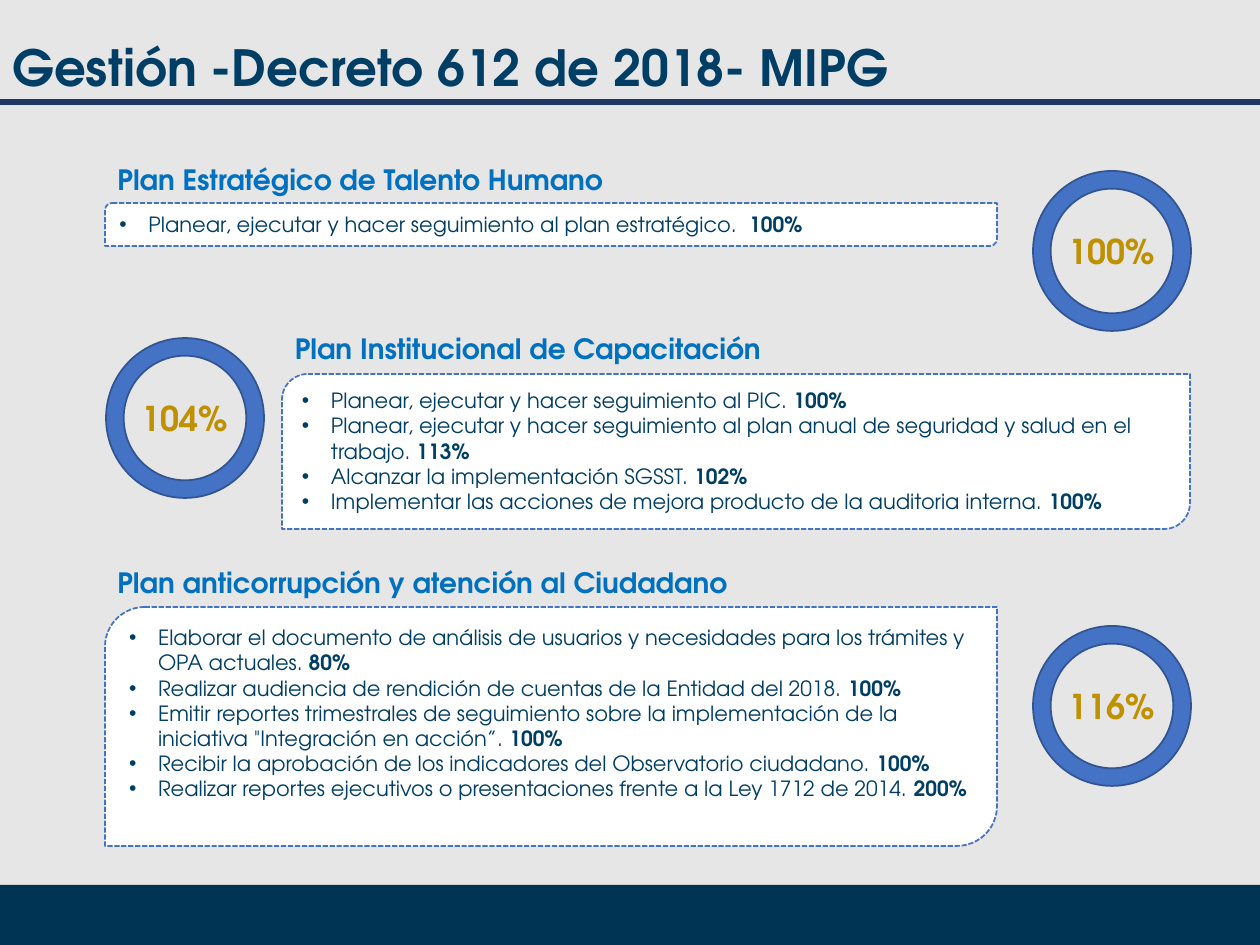
from dataclasses import dataclass

from lxml.etree import SubElement
from pptx import Presentation
from pptx.dml.color import RGBColor
from pptx.enum.dml import MSO_LINE
from pptx.enum.shapes import MSO_CONNECTOR, MSO_SHAPE
from pptx.enum.text import MSO_ANCHOR, PP_ALIGN
from pptx.oxml.ns import qn
from pptx.util import Pt


@dataclass(frozen=True)
class Theme:
    font: str = "TeX Gyre Adventor"
    background: str = "E7E6E6"
    footer: str = "003454"
    rule: str = "203864"
    text: str = "003E65"
    heading: str = "0070C0"
    panel: str = "FFFFFF"
    accent: str = "4472C4"
    ring_edge: str = "325491"
    percent: str = "BF9000"
    title_size: float = 28.5
    heading_size: float = 16
    body_size: float = 12
    percent_size: float = 19.5


THEME = Theme()
EMU_PER_PX = 914400 / 126
SLIDE_WIDTH, SLIDE_HEIGHT = 1260, 945
FOOTER_TOP, RULE_TOP = 885, 102
RING_WIDTH, RING_HEIGHT = 158, 160
HEADING_HEIGHT, LABEL_HEIGHT, BULLET_INDENT = 47, 54, 29

TITLE = "Gestión -Decreto 612 de 2018- MIPG"
PLANS = [
    {
        "heading": "Plan Estratégico de Talento Humano",
        "heading_box": (105, 156, 572), "align": PP_ALIGN.LEFT,
        "panel": (105, 203, 892, 43),
        "ring": (1033, 171), "total": "100%",
        "goals": [("Planear, ejecutar y hacer seguimiento al plan estratégico.  ", "100%")],
    },
    {
        "heading": "Plan Institucional de Capacitación",
        "heading_box": (282, 325, 492), "align": PP_ALIGN.CENTER,
        "panel": (282, 374, 908, 155),
        "ring": (106, 338), "total": "104%",
        "goals": [
            ("Planear, ejecutar y hacer seguimiento al PIC. ", "100%"),
            ("Planear, ejecutar y hacer seguimiento al plan anual de seguridad y salud en el trabajo. ", "113%"),
            ("Alcanzar la implementación SGSST. ", "102%"),
            ("Implementar las acciones de mejora producto de la auditoria interna. ", "100%"),
        ],
    },
    {
        "heading": "Plan anticorrupción y atención al Ciudadano",
        "heading_box": (105, 559, 743), "align": PP_ALIGN.LEFT,
        "panel": (105, 607, 892, 239),
        "ring": (1033, 626), "total": "116%",
        "goals": [
            ("Elaborar el documento de análisis de usuarios y necesidades para los trámites y OPA actuales. ", "80%"),
            ("Realizar audiencia de rendición de cuentas de la Entidad del 2018. ", "100%"),
            ("Emitir reportes trimestrales de seguimiento sobre la implementación de la iniciativa \"Integración en acción”. ", "100%"),
            ("Recibir la aprobación de los indicadores del Observatorio ciudadano. ", "100%"),
            ("Realizar reportes ejecutivos o presentaciones frente a la Ley 1712 de 2014. ", "200%"),
        ],
    },
]


def px(*lengths):
    return [round(length * EMU_PER_PX) for length in lengths]


def color(value):
    return RGBColor.from_string(value)


def style(font, size, value, bold=None):
    font.name, font.size, font.bold = THEME.font, Pt(size), bold
    font.color.rgb = color(value)


def add_box(shapes, kind, box, fill, edge=None):
    shape = shapes.add_shape(kind, *px(*box))
    shape.shadow.inherit = False
    shape.fill.solid()
    shape.fill.fore_color.rgb = color(fill)
    if edge:
        shape.line.color.rgb = color(edge)
        shape.line.width = Pt(1)
    else:
        shape.line.fill.background()
    return shape


def add_label(shapes, text, box, size, value, align=PP_ALIGN.LEFT):
    frame = shapes.add_textbox(*px(*box)).text_frame
    frame.word_wrap = True
    paragraph = frame.paragraphs[0]
    paragraph.text, paragraph.alignment = text, align
    style(paragraph.font, size, value, True)
    return frame


def add_panel(shapes, box, goals):
    shape = add_box(shapes, MSO_SHAPE.ROUND_2_DIAG_RECTANGLE, box, THEME.panel, THEME.accent)
    shape.line.dash_style = MSO_LINE.SQUARE_DOT
    frame = shape.text_frame
    frame.word_wrap = True
    frame.vertical_anchor = MSO_ANCHOR.TOP
    [indent] = px(BULLET_INDENT)
    for index, (goal, result) in enumerate(goals):
        paragraph = frame.add_paragraph() if index else frame.paragraphs[0]
        paragraph.alignment = PP_ALIGN.LEFT
        properties = paragraph._p.get_or_add_pPr()
        properties.set("marL", str(indent))
        properties.set("indent", str(-indent))
        SubElement(properties, qn("a:buFont"), typeface="Arial")
        SubElement(properties, qn("a:buChar"), char="•")
        for text, bold in ((goal, False), (result, True)):
            run = paragraph.add_run()
            run.text = text
            style(run.font, THEME.body_size, THEME.text, bold)


def add_ring(shapes, left, top, total):
    group = shapes.add_group_shape().shapes
    ring = add_box(group, MSO_SHAPE.DONUT, (left, top, RING_WIDTH, RING_HEIGHT),
                   THEME.accent, THEME.ring_edge)
    ring.adjustments[0] = 0.112
    label_top = top + (RING_HEIGHT - LABEL_HEIGHT) / 2
    add_label(group, total, (left, label_top, RING_WIDTH, LABEL_HEIGHT),
              THEME.percent_size, THEME.percent, PP_ALIGN.CENTER)


def main():
    """Build the plan progress slide and save it."""
    presentation = Presentation()
    presentation.slide_width, presentation.slide_height = px(SLIDE_WIDTH, SLIDE_HEIGHT)
    slide = presentation.slides.add_slide(presentation.slide_layouts[6])
    slide.background.fill.solid()
    slide.background.fill.fore_color.rgb = color(THEME.background)
    shapes = slide.shapes

    add_box(shapes, MSO_SHAPE.RECTANGLE,
            (0, FOOTER_TOP, SLIDE_WIDTH, SLIDE_HEIGHT - FOOTER_TOP), THEME.footer)
    rule = shapes.add_connector(MSO_CONNECTOR.STRAIGHT, *px(0, RULE_TOP, SLIDE_WIDTH, RULE_TOP))
    rule.line.color.rgb = color(THEME.rule)
    rule.line.width = Pt(3)
    SubElement(rule._element.spPr, qn("a:effectLst"))

    title = add_label(shapes, TITLE, (0, 35, 1063, 64), THEME.title_size, THEME.text)
    title.vertical_anchor = MSO_ANCHOR.MIDDLE
    for plan in PLANS:
        add_panel(shapes, plan["panel"], plan["goals"])
        add_label(shapes, plan["heading"], (*plan["heading_box"], HEADING_HEIGHT),
                  THEME.heading_size, THEME.heading, plan["align"])
        add_ring(shapes, *plan["ring"], plan["total"])

    presentation.save("out.pptx")


if __name__ == "__main__":
    main()
